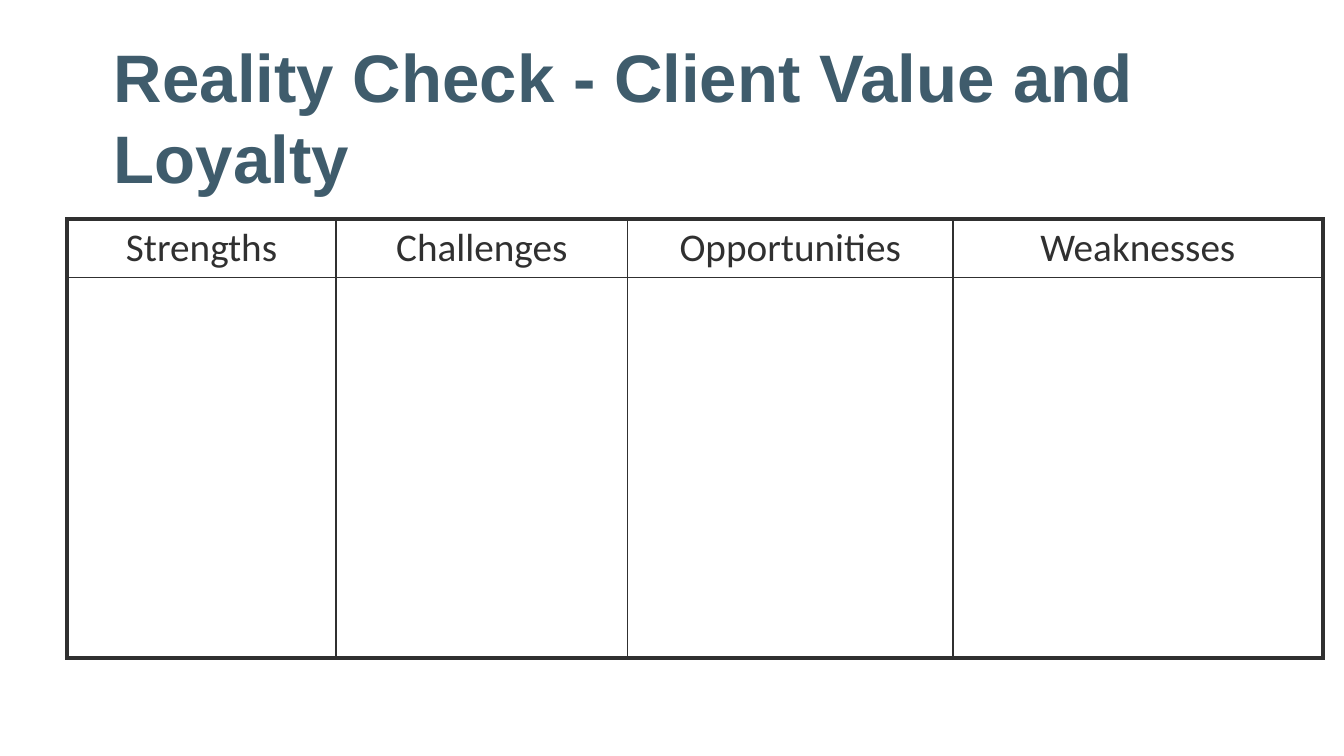
from lxml import etree
from pptx import Presentation
from pptx import util as u
from pptx.dml.color import RGBColor
from pptx.enum import text
from pptx.oxml.ns import qn

SLATE = RGBColor(0x3F, 0x5C, 0x6C)
INK = RGBColor(0x30, 0x30, 0x30)
HEADS = ["Strengths", "Challenges", "Opportunities", "Weaknesses"]
WIDTHS = [5.08, 5.51, 6.15, 6.99]
HEIGHTS = [1.06, 7.19]
THICK, THIN = 2.25, 1


def add_run(para, words, size, font, color, bold=False):
    """Append one formatted run to a paragraph."""
    run = para.add_run()
    run.text = words
    run.font.size = u.Pt(size)
    run.font.name = font
    run.font.bold = bold
    run.font.color.rgb = color


def set_title(slide, words):
    """Place and fill the title placeholder."""
    title = slide.shapes.title
    title.left, title.top = u.Cm(1.9), u.Cm(0.48)
    title.width, title.height = u.Cm(21.6), u.Cm(2.39)
    frame = title.text_frame
    frame.word_wrap = True
    frame.auto_size = text.MSO_AUTO_SIZE.NONE
    frame.vertical_anchor = text.MSO_ANCHOR.TOP
    frame.margin_top = u.Cm(0.2)
    para = frame.paragraphs[0]
    para.alignment = text.PP_ALIGN.LEFT
    para.line_spacing = u.Pt(43)
    add_run(para, words, 36, "Arial", SLATE, True)


def set_edges(cell, widths):
    """Draw the left, right, top and bottom borders of a cell."""
    props = cell._tc.get_or_add_tcPr()
    for spot, (tag, width) in enumerate(zip(("lnL", "lnR", "lnT", "lnB"), widths)):
        line = etree.Element(qn(f"a:{tag}"), w=str(u.Pt(width)))
        fill = etree.SubElement(line, qn("a:solidFill"))
        etree.SubElement(fill, qn("a:srgbClr"), val=str(INK))
        props.insert(spot, line)


def add_grid(slide):
    """Add the four-column table with a heavy outer frame."""
    rows, cols = len(HEIGHTS), len(WIDTHS)
    frame = slide.shapes.add_table(
        rows, cols, u.Cm(1.27), u.Cm(4.14), u.Cm(sum(WIDTHS)), u.Cm(sum(HEIGHTS)))
    grid = frame.table
    grid.first_row = grid.horz_banding = False
    for col, width in zip(grid.columns, WIDTHS):
        col.width = u.Cm(width)
    for row, height in zip(grid.rows, HEIGHTS):
        row.height = u.Cm(height)
    for r in range(rows):
        for c in range(cols):
            cell = grid.cell(r, c)
            cell.fill.background()
            cell.margin_left = cell.margin_right = u.Cm(0.25)
            cell.margin_top = cell.margin_bottom = u.Cm(0.1)
            outer = (c == 0, c == cols - 1, r == 0, r == rows - 1)
            set_edges(cell, [THICK if edge else THIN for edge in outer])
    for c, head in enumerate(HEADS):
        para = grid.cell(0, c).text_frame.paragraphs[0]
        para.alignment = text.PP_ALIGN.CENTER
        add_run(para, head, 21, "Calibri", INK)


def main():
    """Build and save the slide."""
    deck = Presentation()
    deck.slide_width, deck.slide_height = u.Cm(25.4), u.Cm(14.29)
    slide = deck.slides.add_slide(deck.slide_layouts[5])
    set_title(slide, "Reality Check - Client Value and Loyalty")
    add_grid(slide)
    deck.save("out.pptx")


if __name__ == "__main__":
    main()
